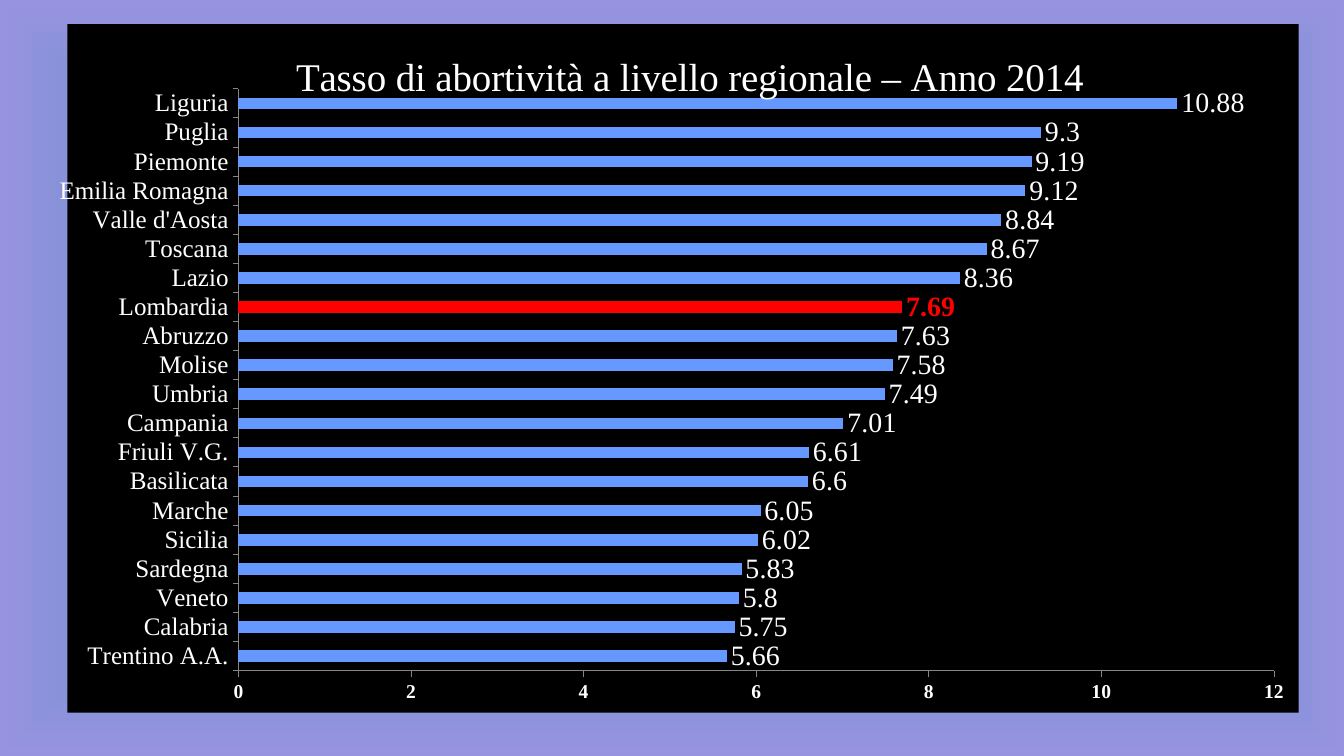
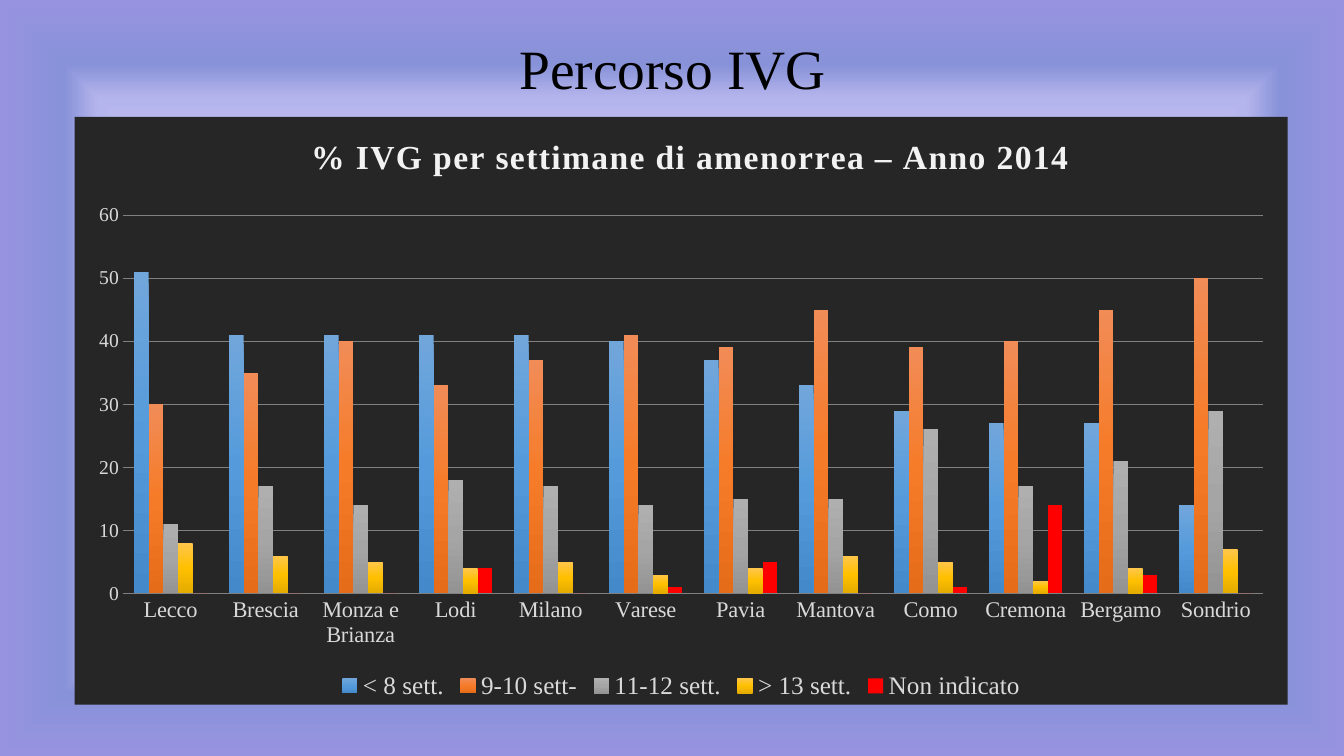
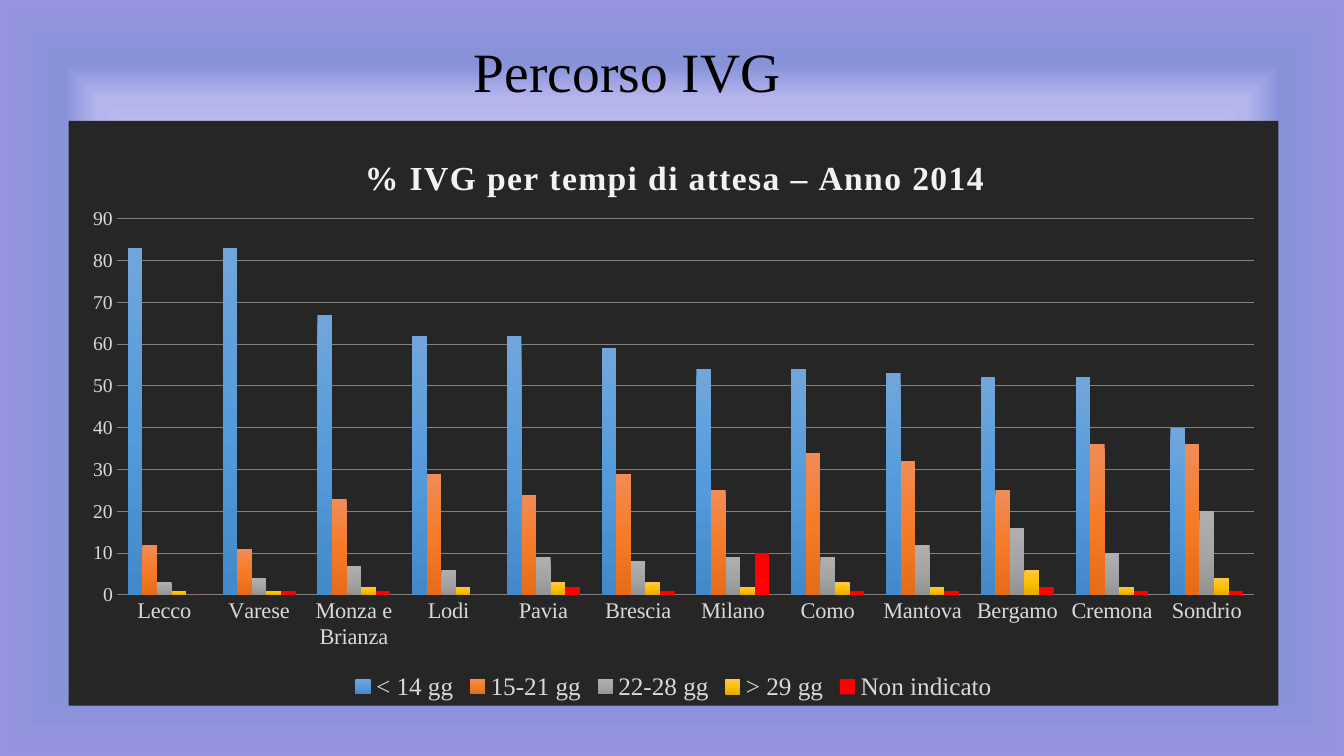
import pptx
import pptx.chart.data
import pptx.dml.color
import pptx.enum.chart
import pptx.enum.text
import pptx.oxml
import pptx.oxml.ns
import pptx.util

FONT = "Times New Roman"
WIDTH, HEIGHT = 13.33, 7.5
BACKDROP = [(0, "F7FAFD"), (74, "B5B5ED"), (83, "8892D8"), (100, "9793E1")]
SERIES_FILLS = [
    [(0, "71A6DB"), (50, "559BDB"), (100, "448ACA")],
    [(0, "F18C57"), (50, "F67B28"), (100, "E56C19")],
    [(0, "AFAFAF"), (50, "A5A5A5"), (100, "939393")],
    [(0, "FFC64B"), (50, "FFC000"), (100, "E3AB00")],
    "FF0000",
]
CENTRE_OUT = ('<a:path path="shape"><a:fillToRect l="50000" t="50000" '
              'r="50000" b="50000"/></a:path>')
DOWNWARD = '<a:lin ang="5400000" scaled="0"/>'

REGIONS = [
    ("Trentino A.A.", 5.66), ("Calabria", 5.75), ("Veneto", 5.8),
    ("Sardegna", 5.83), ("Sicilia", 6.02), ("Marche", 6.05),
    ("Basilicata", 6.6), ("Friuli V.G.", 6.61), ("Campania", 7.01),
    ("Umbria", 7.49), ("Molise", 7.58), ("Abruzzo", 7.63),
    ("Lombardia", 7.69), ("Lazio", 8.36), ("Toscana", 8.67),
    ("Valle d'Aosta", 8.84), ("Emilia Romagna", 9.12), ("Piemonte", 9.19),
    ("Puglia", 9.3), ("Liguria", 10.88),
]
AMENORRHEA_CITIES = ["Lecco", "Brescia", "Monza e Brianza", "Lodi", "Milano", "Varese",
                     "Pavia", "Mantova", "Como", "Cremona", "Bergamo", "Sondrio"]
AMENORRHEA = {
    "< 8 sett.": [51, 41, 41, 41, 41, 40, 37, 33, 29, 27, 27, 14],
    "9-10 sett-": [30, 35, 40, 33, 37, 41, 39, 45, 39, 40, 45, 50],
    "11-12 sett.": [11, 17, 14, 18, 17, 14, 15, 15, 26, 17, 21, 29],
    "> 13 sett.": [8, 6, 5, 4, 5, 3, 4, 6, 5, 2, 4, 7],
    "Non indicato": [0, 0, 0, 4, 0, 1, 5, 0, 1, 14, 3, 0],
}
WAITING_CITIES = ["Lecco", "Varese", "Monza e Brianza", "Lodi", "Pavia", "Brescia",
                  "Milano", "Como", "Mantova", "Bergamo", "Cremona", "Sondrio"]
WAITING = {
    "< 14 gg": [83, 83, 67, 62, 62, 59, 54, 54, 53, 52, 52, 40],
    "15-21 gg": [12, 11, 23, 29, 24, 29, 25, 34, 32, 25, 36, 36],
    "22-28 gg": [3, 4, 7, 6, 9, 8, 9, 9, 12, 16, 10, 20],
    "> 29 gg": [1, 1, 2, 2, 3, 3, 2, 3, 2, 6, 2, 4],
    "Non indicato": [0, 1, 1, 0, 2, 1, 10, 1, 1, 2, 1, 1],
}


def rgb(value):
    return pptx.dml.color.RGBColor.from_string(value)


def place(left, top, width, height):
    shares = ((left, WIDTH), (top, HEIGHT), (width, WIDTH), (height, HEIGHT))
    return [pptx.util.Inches(share / 100 * size) for share, size in shares]


def xml(prefix, tag, inner):
    ns = pptx.oxml.ns.nsdecls("a", "c")
    return pptx.oxml.parse_xml(f"<{prefix}:{tag} {ns}>{inner}</{prefix}:{tag}>")


def set_gradient(holder, stops, direction):
    old = holder.xpath(".//a:gradFill")[0]
    marks = "".join(f'<a:gs pos="{pos * 1000}"><a:srgbClr val="{color}"/></a:gs>'
                    for pos, color in stops)
    old.getparent().replace(old, xml("a", "gradFill", f"<a:gsLst>{marks}</a:gsLst>{direction}"))


def set_layout(parent, index, inner=False, **shares):
    for old in parent.xpath("./c:layout"):
        parent.remove(old)
    target = '<c:layoutTarget val="inner"/>' if inner else ""
    values = "".join(f'<c:{key} val="{value}"/>' for key, value in shares.items())
    parent.insert(index, xml("c", "layout", f'<c:manualLayout>{target}<c:xMode val="edge"/>'
                             f'<c:yMode val="edge"/>{values}</c:manualLayout>'))


def style_font(font, size, color, bold=False):
    font.name = FONT
    font.size = pptx.util.Pt(size)
    font.bold = bold
    font.color.rgb = rgb(color)


def style_axis(axis, size, color, tick, line=None, grid=None, bold=False):
    style_font(axis.tick_labels.font, size, color, bold)
    axis.major_tick_mark = tick
    axis.minor_tick_mark = pptx.enum.chart.XL_TICK_MARK.NONE
    axis.has_major_gridlines = grid is not None
    if grid:
        axis.major_gridlines.format.line.color.rgb = rgb(grid)
        axis.major_gridlines.format.line.width = pptx.util.Pt(0.75)
    if line:
        axis.format.line.color.rgb = rgb(line)
    else:
        axis.format.line.fill.background()


def add_title(slide, text, box):
    tf = slide.shapes.add_textbox(*place(*box)).text_frame
    tf.word_wrap = True
    tf.margin_top = tf.margin_bottom = 0
    tf.vertical_anchor = pptx.enum.text.MSO_ANCHOR.MIDDLE
    p = tf.paragraphs[0]
    p.alignment = pptx.enum.text.PP_ALIGN.CENTER
    p.line_spacing = 0.9
    r = p.add_run()
    r.text = text
    style_font(r.font, 39.6, "000000")


def add_chart(slide, kind, box, cats, series, fill, plot_area):
    data = pptx.chart.data.CategoryChartData()
    data.categories = cats
    for name, values in series.items():
        data.add_series(name, values)
    chart = slide.shapes.add_chart(kind, *place(*box), data).chart
    style_font(chart.font, 14, "FFFFFF")
    chart.has_legend = False
    plot = chart.plots[0]
    plot.gap_width = 150
    plot.overlap = 0
    plot.vary_by_categories = False
    chart.element.xpath("./c:chart")[0].addnext(
        xml("c", "spPr", f'<a:solidFill><a:srgbClr val="{fill}"/></a:solidFill>'
            "<a:ln><a:noFill/></a:ln>"))
    area = chart.element.xpath(".//c:plotArea")[0]
    set_layout(area, 0, True, **dict(zip("xywh", plot_area)))
    area.append(xml("c", "spPr", "<a:noFill/>"))
    return chart


def add_chart_title(chart, text, size, color, x, y, bold=False, spacing=0):
    chart.has_title = True
    r = chart.chart_title.text_frame.paragraphs[0].add_run()
    r.text = text
    style_font(r.font, size, color, bold)
    title = chart.element.xpath("./c:chart/c:title")[0]
    title.xpath(".//a:r/a:rPr")[0].set("spc", str(spacing))
    set_layout(title, 1, x=x, y=y)


def add_region_chart(slide):
    cats = [name for name, rate in REGIONS]
    rates = [rate for name, rate in REGIONS]
    chart = add_chart(slide, pptx.enum.chart.XL_CHART_TYPE.BAR_CLUSTERED,
                      (4.43, 3.2, 92.2, 91.07), cats, {"Series 1": rates},
                      "000000", (0.139, 0.094, 0.841, 0.845))
    add_chart_title(chart, "Tasso di abortività a livello regionale – Anno 2014",
                    28, "FFFFFF", 0.18, 0.03)
    outside = pptx.enum.chart.XL_TICK_MARK.OUTSIDE
    style_axis(chart.category_axis, 18, "FFFFFF", outside, line="868686")
    style_axis(chart.value_axis, 14, "FFFFFF", outside, line="868686", bold=True)
    chart.value_axis.minimum_scale = 0
    chart.value_axis.maximum_scale = 12
    chart.value_axis.major_unit = 2

    bars = chart.plots[0].series[0]
    bars.format.fill.solid()
    bars.format.fill.fore_color.rgb = rgb("6699FF")
    above = pptx.enum.chart.XL_LABEL_POSITION.OUTSIDE_END
    labels = bars.data_labels
    labels.show_value = True
    labels.position = above
    style_font(labels.font, 20, "FFFFFF")
    lombardia = bars.points[cats.index("Lombardia")]
    lombardia.format.fill.solid()
    lombardia.format.fill.fore_color.rgb = rgb("FF0000")
    style_font(lombardia.data_label.font, 20, "FF0000", True)
    lombardia.data_label.position = above


def add_city_chart(slide, box, title, title_x, title_y, cats, series, top):
    chart = add_chart(slide, pptx.enum.chart.XL_CHART_TYPE.COLUMN_CLUSTERED,
                      box, cats, series, "262626", (0.04, 0.167, 0.94, 0.644))
    add_chart_title(chart, title, 24, "F2F2F2", title_x, title_y, True, 100)
    none = pptx.enum.chart.XL_TICK_MARK.NONE
    style_axis(chart.category_axis, 16, "D9D9D9", none)
    style_axis(chart.value_axis, 14, "D9D9D9", none, grid="808080")
    chart.value_axis.minimum_scale = 0
    chart.value_axis.maximum_scale = top
    chart.value_axis.major_unit = 10
    chart.has_legend = True
    chart.legend.position = pptx.enum.chart.XL_LEGEND_POSITION.BOTTOM
    chart.legend.include_in_layout = False
    style_font(chart.legend.font, 18, "D9D9D9")
    elements = chart.element.xpath(".//c:ser")
    for bars, element, fill in zip(chart.plots[0].series, elements, SERIES_FILLS):
        if isinstance(fill, str):
            bars.format.fill.solid()
            bars.format.fill.fore_color.rgb = rgb(fill)
        else:
            bars.format.fill.gradient()
            set_gradient(element, fill, DOWNWARD)


def main():
    prs = pptx.Presentation()
    prs.slide_width = pptx.util.Inches(WIDTH)
    prs.slide_height = pptx.util.Inches(HEIGHT)
    master = prs.slide_master
    master.background.fill.gradient()
    set_gradient(master.element.xpath(".//p:bgPr")[0], BACKDROP, CENTRE_OUT)
    regions, weeks, waits = [prs.slides.add_slide(prs.slide_layouts[6]) for _ in range(3)]

    add_region_chart(regions)

    add_title(weeks, "Percorso IVG", (6.9, 5.47, 86.27, 8))
    add_city_chart(weeks, (5.55, 15.47, 90.25, 77.73),
                   "% IVG per settimane di amenorrea – Anno 2014", 0.19, 0.02,
                   AMENORRHEA_CITIES, AMENORRHEA, 60)

    add_title(waits, "Percorso IVG", (29.41, 5.87, 34.51, 8))
    add_city_chart(waits, (5.1, 16, 90.02, 77.33),
                   "% IVG per tempi di attesa – Anno 2014", 0.24, 0.05,
                   WAITING_CITIES, WAITING, 90)

    prs.save("out.pptx")


if __name__ == "__main__":
    main()
